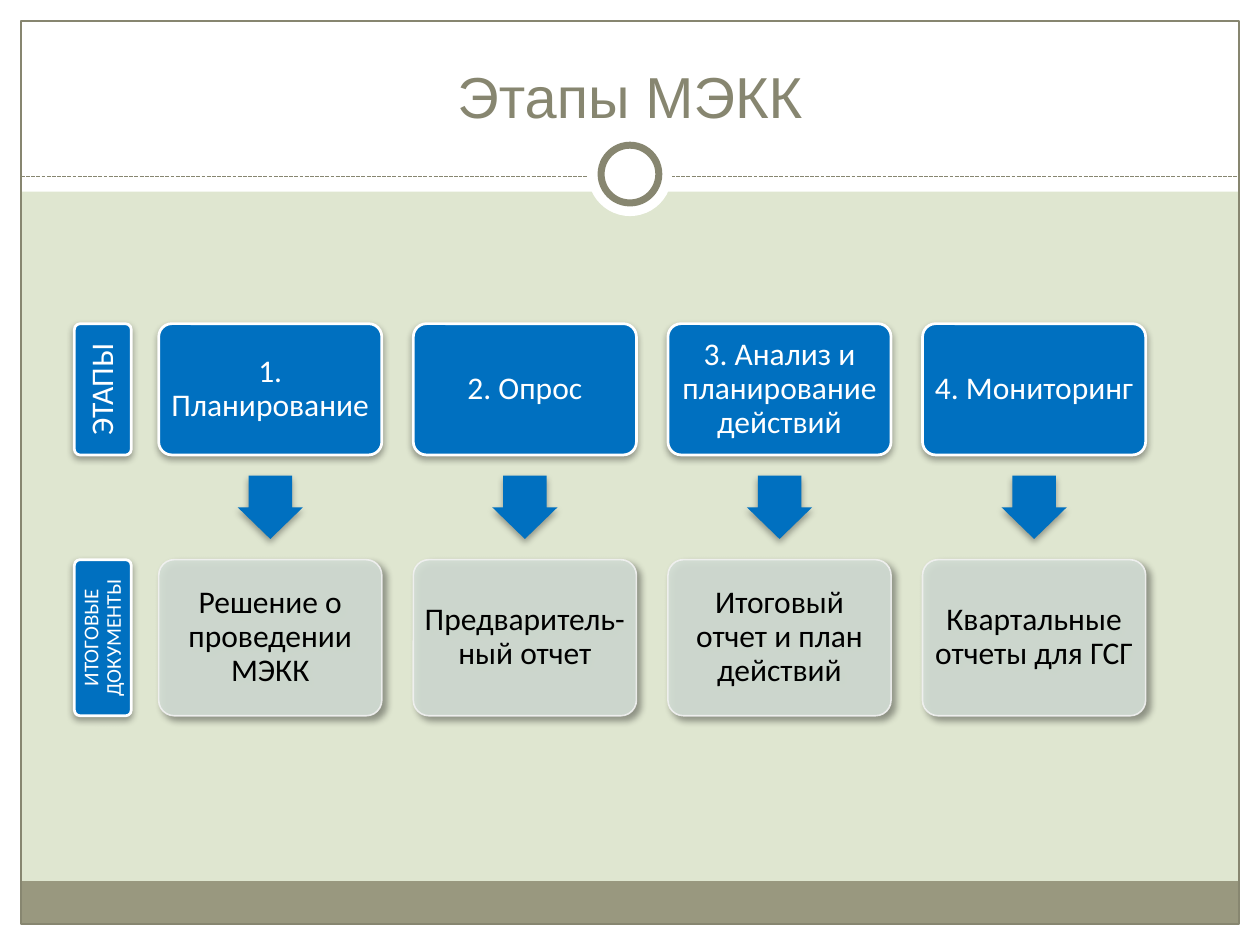
from dataclasses import dataclass

from lxml import etree
from pptx import Presentation
from pptx.dml.color import RGBColor
from pptx.enum import dml, shapes, text
from pptx.oxml import ns
from pptx.util import Pt


@dataclass(frozen=True)
class Theme:
    background: str = "DFE6D0"
    white: str = "FFFFFF"
    olive: str = "878670"
    footer: str = "99987F"
    blue: str = "0070C0"
    card: str = "D3DED5"
    card_line: str = "F2F2F2"
    black: str = "000000"
    title_font: str = "Arial"
    body_font: str = "Calibri"
    title_size: float = 33
    body_size: float = 18
    small_size: float = 12


THEME = Theme()
PRESET = shapes.MSO_SHAPE

WIDTH, HEIGHT = 720, 540
MARGIN = 12
FOOTER_TOP, FOOTER_HEIGHT = 503.5, 24.3
DIVIDER_Y = 101
RING_CENTER_Y = 99.5

CARD_LEFT, CARD_PITCH, CARD_WIDTH = 90.7, 145.5, 127.5
LABEL_LEFT, LABEL_WIDTH = 42.5, 32.5
STAGE_TOP, STAGE_HEIGHT = 185, 75
DOCUMENT_TOP, DOCUMENT_HEIGHT = 319.8, 89.2
ARROW_LENGTH, ARROW_WIDTH = 36.2, 37.3
CORNER = 0.1

STAGES = [
    ("1. Планирование", "Решение о проведении МЭКК"),
    ("2. Опрос", "Предваритель-ный отчет"),
    ("3. Анализ и планирование действий", "Итоговый отчет и план действий"),
    ("4. Мониторинг", "Квартальные отчеты для ГСГ"),
]


def rgb(color):
    return RGBColor.from_string(color)


class SlideBuilder:
    """Draws elements on one slide; all lengths are in points."""

    def __init__(self, slide, theme):
        self.slide = slide
        self.theme = theme
        slide.background.fill.solid()
        slide.background.fill.fore_color.rgb = rgb(theme.background)

    def shape(self, preset, left, top, width, height, fill=None, line=None,
              line_width=0.75):
        shape = self.slide.shapes.add_shape(
            preset, Pt(left), Pt(top), Pt(width), Pt(height))
        shape.shadow.inherit = False
        if fill:
            shape.fill.solid()
            shape.fill.fore_color.rgb = rgb(fill)
        else:
            shape.fill.background()
        if line:
            shape.line.color.rgb = rgb(line)
            shape.line.width = Pt(line_width)
        else:
            shape.line.fill.background()
        return shape

    def circle(self, center_y, diameter, **style):
        return self.shape(PRESET.OVAL, (WIDTH - diameter) / 2,
                          center_y - diameter / 2, diameter, diameter, **style)

    def divider(self, left, right, y):
        line = self.slide.shapes.add_connector(
            shapes.MSO_CONNECTOR.STRAIGHT, Pt(left), Pt(y), Pt(right), Pt(y))
        line.line.color.rgb = rgb(self.theme.olive)
        line.line.width = Pt(0.75)
        line.line.dash_style = dml.MSO_LINE.SQUARE_DOT
        properties = line.element.find(ns.qn("p:spPr"))
        etree.SubElement(properties, ns.qn("a:effectLst"))

    def title(self, wording, left, top, width, height):
        title = self.slide.shapes.title
        title.left, title.top = Pt(left), Pt(top)
        title.width, title.height = Pt(width), Pt(height)
        self.set_text(title, wording, self.theme.title_size, self.theme.olive,
                      self.theme.title_font)
        title.text_frame.vertical_anchor = text.MSO_ANCHOR.BOTTOM
        # The placeholder comes first in the tree; lift it above the bands.
        title.element.getparent().append(title.element)

    def set_text(self, shape, wording, size, color, font):
        frame = shape.text_frame
        frame.word_wrap = True
        frame.auto_size = text.MSO_AUTO_SIZE.NONE
        frame.vertical_anchor = text.MSO_ANCHOR.MIDDLE
        paragraph = frame.paragraphs[0]
        paragraph.text = wording
        paragraph.alignment = text.PP_ALIGN.CENTER
        paragraph.font.size = Pt(size)
        paragraph.font.name = font
        paragraph.font.color.rgb = rgb(color)

    def box(self, wording, left, top, width, height, fill, line, line_width,
            color, size):
        box = self.shape(PRESET.ROUNDED_RECTANGLE, left, top, width, height,
                         fill, line, line_width)
        box.adjustments[0] = CORNER
        self.set_text(box, wording, size, color, self.theme.body_font)
        frame = box.text_frame
        frame.margin_left = frame.margin_right = Pt(3.8)
        frame.margin_top = frame.margin_bottom = Pt(3.8)
        frame.paragraphs[0].line_spacing = 0.9
        return box

    def blue_box(self, wording, left, top, width, height, size):
        box = self.box(wording, left, top, width, height, self.theme.blue,
                       self.theme.white, 1.57, self.theme.white, size)
        self.cast_shadow(box, 35, 2, 90)
        return box

    def document_card(self, wording, left, top, width, height):
        card = self.box(wording, left, top, width, height, self.theme.card,
                        self.theme.card_line, 0.9, self.theme.black,
                        self.theme.body_size)
        for color in card.element.spPr.iter(ns.qn("a:srgbClr")):
            self.set_alpha(color, 90)
        self.cast_shadow(card, 40, 3, 45)

    def row_label(self, wording, top, height, size):
        """Add a narrow box that reads upwards."""
        shift = (height - LABEL_WIDTH) / 2
        label = self.blue_box(wording, LABEL_LEFT - shift, top + shift,
                              height, LABEL_WIDTH, size)
        label.rotation = 270

    def down_arrow(self, center_x, center_y):
        arrow = self.shape(PRESET.RIGHT_ARROW, center_x - ARROW_LENGTH / 2,
                           center_y - ARROW_WIDTH / 2, ARROW_LENGTH,
                           ARROW_WIDTH, self.theme.blue)
        arrow.adjustments[0], arrow.adjustments[1] = 0.667, 0.5
        arrow.rotation = 90
        self.cast_shadow(arrow, 35, 2, 90)

    def set_alpha(self, color, percent):
        etree.SubElement(color, ns.qn("a:alpha"), val=str(percent * 1000))

    def cast_shadow(self, shape, percent, distance, angle):
        effects = shape.element.spPr.find(ns.qn("a:effectLst"))
        shadow = etree.SubElement(
            effects, ns.qn("a:outerShdw"), blurRad=str(Pt(4)),
            dist=str(Pt(distance)), dir=str(angle * 60000), rotWithShape="0")
        color = etree.SubElement(shadow, ns.qn("a:srgbClr"),
                                 val=self.theme.black)
        self.set_alpha(color, percent)


def draw_backdrop(builder):
    theme = builder.theme
    inner_width = WIDTH - 2 * MARGIN
    white_bands = [
        (0, HEIGHT - MARGIN, WIDTH, MARGIN),
        (0, 0, WIDTH, 109.5),
        (0, 0, MARGIN, HEIGHT),
        (WIDTH - MARGIN, 0, MARGIN, HEIGHT),
    ]
    for band in white_bands:
        builder.shape(PRESET.RECTANGLE, *band, fill=theme.white)
    builder.shape(PRESET.RECTANGLE, MARGIN, FOOTER_TOP, inner_width,
                  FOOTER_HEIGHT, fill=theme.footer)
    builder.shape(PRESET.RECTANGLE, MARGIN, MARGIN, inner_width,
                  HEIGHT - 2 * MARGIN, line=theme.olive)
    builder.divider(MARGIN, WIDTH - MARGIN, DIVIDER_Y)
    builder.circle(RING_CENTER_Y, 48, fill=theme.white)
    builder.circle(RING_CENTER_Y, 33, fill=theme.white, line=theme.olive,
                   line_width=4)


def draw_stages(builder):
    theme = builder.theme
    arrow_y = (STAGE_TOP + STAGE_HEIGHT + DOCUMENT_TOP) / 2
    for index, (stage, document) in enumerate(STAGES):
        left = CARD_LEFT + index * CARD_PITCH
        builder.blue_box(stage, left, STAGE_TOP, CARD_WIDTH, STAGE_HEIGHT,
                         theme.body_size)
        builder.down_arrow(left + CARD_WIDTH / 2, arrow_y)
        builder.document_card(document, left, DOCUMENT_TOP, CARD_WIDTH,
                              DOCUMENT_HEIGHT)
    builder.row_label("ЭТАПЫ", STAGE_TOP, STAGE_HEIGHT, theme.body_size)
    builder.row_label("ИТОГОВЫЕ ДОКУМЕНТЫ", DOCUMENT_TOP, DOCUMENT_HEIGHT,
                      theme.small_size)


def main():
    presentation = Presentation()
    presentation.slide_width, presentation.slide_height = Pt(WIDTH), Pt(HEIGHT)
    title_only = presentation.slide_layouts[5]
    builder = SlideBuilder(presentation.slides.add_slide(title_only), THEME)
    draw_backdrop(builder)
    builder.title("Этапы МЭКК", 24, 18, 672, 60)
    draw_stages(builder)
    presentation.save("out.pptx")


if __name__ == "__main__":
    main()
